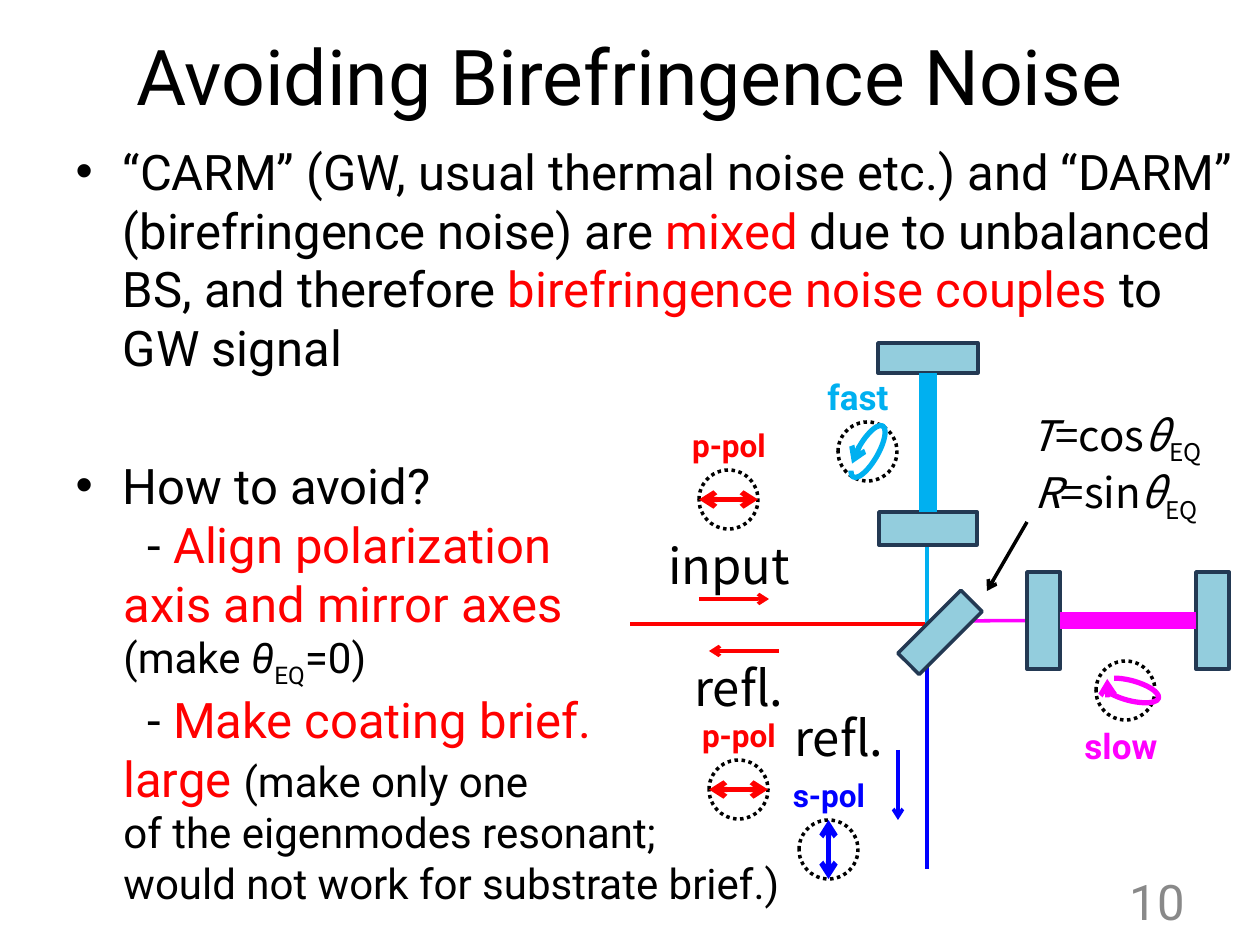
"""Build the slide on avoiding birefringence noise in an interferometer."""
from copy import deepcopy

from pptx import Presentation
from pptx.dml.color import RGBColor
from pptx.enum.dml import MSO_LINE
from pptx.enum.shapes import MSO_CONNECTOR, MSO_SHAPE as Shape
from pptx.enum.text import MSO_ANCHOR as Anchor, MSO_AUTO_SIZE, PP_ALIGN as Align
from pptx.oxml.ns import qn
from pptx.util import Emu, Inches, Pt
from lxml.etree import SubElement

BLACK = RGBColor(0, 0, 0)
RED = RGBColor(255, 0, 0)
BLUE = RGBColor(0, 0, 255)
CYAN = RGBColor(0, 176, 240)
MAGENTA = RGBColor(255, 0, 255)
GRAY = RGBColor(137, 137, 137)
MIRROR_FILL = RGBColor(147, 205, 221)
MIRROR_EDGE = RGBColor(35, 57, 83)
ROBOTO, NOTO = "Roboto", "Noto Sans CJK JP"
SCALE = 914400 / 126

TITLE = "Avoiding Birefringence Noise"
BODY = [
    ("bullet", 6, [
        ("“CARM” (GW, usual thermal noise etc.) and “DARM” (birefringence noise) are ", 28, BLACK),
        ("mixed", 28, RED),
        (" due to unbalanced BS, and therefore ", 28, BLACK),
        ("birefringence noise couples ", 28, RED),
        ("to GW signal", 28, BLACK)]),
    ("bullet", 45, [("How to avoid?", 28, BLACK)]),
    ("dash", 0, [
        ("- ", 28, BLACK),
        ("Align polarization\naxis and mirror axes\n", 28, RED),
        ("(make ", 24, BLACK), ("θ", 24, BLACK, "italic"),
        ("EQ", 24, BLACK, "sub"), ("=0)", 24, BLACK)]),
    ("dash", 0, [
        ("- ", 28, BLACK),
        ("Make coating brief.\nlarge ", 28, RED),
        ("(make only one\nof the eigenmodes resonant;\nwould not work for substrate brief.)",
         24, BLACK)]),
]
EQUATIONS = [("T", "=cos"), ("R", "=sin")]
PORT_LABELS = [("input", 630, 529), ("refl.", 640, 651), ("refl.", 740, 701)]
BEAMS = [
    (927, 621, 927, 869, BLUE),
    (927, 621, 1196, 620, MAGENTA),
    (630, 624, 930, 624, RED),
    (927, 653, 927, 403, CYAN),
]
ARROWS = [
    (699, 599, 769, 599, RED),
    (779, 651, 709, 651, RED),
    (898, 750, 898, 820, BLUE),
    (1027, 522, 987, 591, BLACK),
]
MIRRORS = {
    "splitter": (925, 588, 30, 89, 45),
    "north input": (879, 512, 98, 33, 0),
    "north end": (878, 343, 100, 30, 0),
    "east input": (1027, 572, 33, 97, 0),
    "east end": (1196, 572, 33, 97, 0),
}
ARMS = [
    ("east input", 3, "east end", 1, MAGENTA),
    ("north input", 0, "north end", 2, CYAN),
]
CIRCLE = 59
POLARIZATIONS = [
    ("p-pol", 699, 470, 729, -50, 18, RED, "horizontal"),
    ("p-pol", 709, 760, 739, -50, 18, RED, "horizontal"),
    ("s-pol", 799, 820, 829, -50, 18, BLUE, "vertical"),
    ("slow", 1096, 661, 1121, 60, 20, MAGENTA, (1120, 105, "tailEnd")),
    ("fast", 838, 422, 858, -50, 20, CYAN, (858, 30, "headEnd")),
]


def px(*values):
    return [Emu(round(value * SCALE)) for value in values]


def add_spans(para, spans, font=ROBOTO):
    for text, size, color, *styles in spans:
        for index, part in enumerate(text.split("\n")):
            if index:
                para.add_line_break()
                para._p.findall(qn("a:br"))[-1].append(deepcopy(span._r.rPr))
            if not part:
                continue
            span = para.add_run()
            span.text = part
            span.font.name, span.font.size = font, Pt(size)
            span.font.color.rgb = color
            span.font.bold = "bold" in styles
            span.font.italic = "italic" in styles
            if "sub" in styles:
                span._r.rPr.set("baseline", "-25000")


def add_text(slide, frame, lines, font=ROBOTO, align=Align.CENTER, anchor=Anchor.TOP, inset=True):
    text_frame = slide.shapes.add_textbox(*px(*frame)).text_frame
    text_frame.word_wrap = True
    text_frame.vertical_anchor = anchor
    if not inset:
        text_frame.margin_left = text_frame.margin_right = 0
        text_frame.margin_top = text_frame.margin_bottom = 0
    for index, spans in enumerate(lines):
        para = text_frame.add_paragraph() if index else text_frame.paragraphs[0]
        para.alignment = align
        add_spans(para, spans, font)


def style_line(shape, color, width, ends=()):
    shape.line.color.rgb, shape.line.width = color, Pt(width)
    outline = shape._element.spPr.find(qn("a:ln"))
    for end in ends:
        SubElement(outline, qn(f"a:{end}"), type="arrow")


def add_line(slide, points, color, width=2, ends=()):
    line = slide.shapes.add_connector(MSO_CONNECTOR.STRAIGHT, *px(*points))
    style_line(line, color, width, ends)
    SubElement(line._element.spPr, qn("a:effectLst"))
    return line


def add_shape(slide, kind, frame, color, width=2, fill=None, rotation=0, ends=()):
    shape = slide.shapes.add_shape(kind, *px(*frame))
    shape.shadow.inherit = False
    shape.rotation = rotation
    if fill is None:
        shape.fill.background()
    else:
        shape.fill.solid()
        shape.fill.fore_color.rgb = fill
    style_line(shape, color, width, ends)
    return shape


def place(shape, *frame):
    shape.left, shape.top, shape.width, shape.height = px(*frame)


def add_title_and_body(slide):
    title, body = slide.placeholders
    place(title, 0, -4, 1260, 158)
    add_spans(title.text_frame.paragraphs[0], [(TITLE, 44, BLACK)])
    place(body, 63, 135, 1197, 179)
    body.text_frame.auto_size = MSO_AUTO_SIZE.NONE
    for index, (kind, gap, spans) in enumerate(BODY):
        para = body.text_frame.add_paragraph() if index else body.text_frame.paragraphs[0]
        para.space_before = Pt(gap)
        if kind == "dash":
            properties = para._p.get_or_add_pPr()
            properties.set("marL", str(Inches(0.38)))
            properties.set("indent", str(px(24)[0]))
            SubElement(properties, qn("a:buNone"))
        add_spans(para, spans)


def add_interferometer(slide):
    for *points, color in BEAMS:
        add_line(slide, points, color)
    mirrors = {
        name: add_shape(slide, Shape.RECTANGLE, frame, MIRROR_EDGE, 2, MIRROR_FILL, rotation)
        for name, (*frame, rotation) in MIRRORS.items()
    }
    for start, start_side, finish, finish_side, color in ARMS:
        arm = add_line(slide, (0, 0, 0, 0), color, 10)
        arm.begin_connect(mirrors[start], start_side)
        arm.end_connect(mirrors[finish], finish_side)
    for *points, color in ARROWS:
        add_line(slide, points, color, ends=["tailEnd"])


def add_polarization(slide, name, left, top, label_center, label_offset, size, color, mark):
    add_shape(slide, Shape.OVAL, (left, top, CIRCLE, CIRCLE), BLACK).line.dash_style = MSO_LINE.ROUND_DOT
    right, bottom, half = left + CIRCLE, top + CIRCLE, CIRCLE / 2
    diameters = {
        "horizontal": (right, top + half, left, top + half),
        "vertical": (left + half, bottom, left + half, top),
    }
    if mark in diameters:
        add_line(slide, diameters[mark], color, 3, ["headEnd", "tailEnd"])
    else:
        arc_left, rotation, end = mark
        arc = add_shape(slide, Shape.ARC, (arc_left, top, 20, CIRCLE), color, 3, None, rotation, [end])
        arc.adjustments[0], arc.adjustments[1] = 67.67, 61.13
    add_text(slide, (label_center - 50, top + label_offset, 100, 49),
             [[(name, size, color, "bold")]], anchor=Anchor.MIDDLE, inset=False)


def main():
    deck = Presentation()
    deck.slide_width, deck.slide_height = px(1260, 945)
    slide = deck.slides.add_slide(deck.slide_layouts[1])
    add_title_and_body(slide)
    add_text(slide, (903, 876, 294, 50), [[("10", 28, GRAY)]], align=Align.RIGHT, anchor=Anchor.MIDDLE)
    add_interferometer(slide)
    for polarization in POLARIZATIONS:
        add_polarization(slide, *polarization)
    for name, left, top in PORT_LABELS:
        add_text(slide, (left, top, 198, 72), [[(name, 28, BLACK)]], NOTO)
    add_text(slide, (987, 403, 258, 115), [
        [(symbol, 24, BLACK, "italic"), (function, 24, BLACK),
         ("θ", 24, BLACK, "italic"), ("EQ", 24, BLACK, "sub")]
        for symbol, function in EQUATIONS], NOTO)
    deck.save("out.pptx")


if __name__ == "__main__":
    main()
